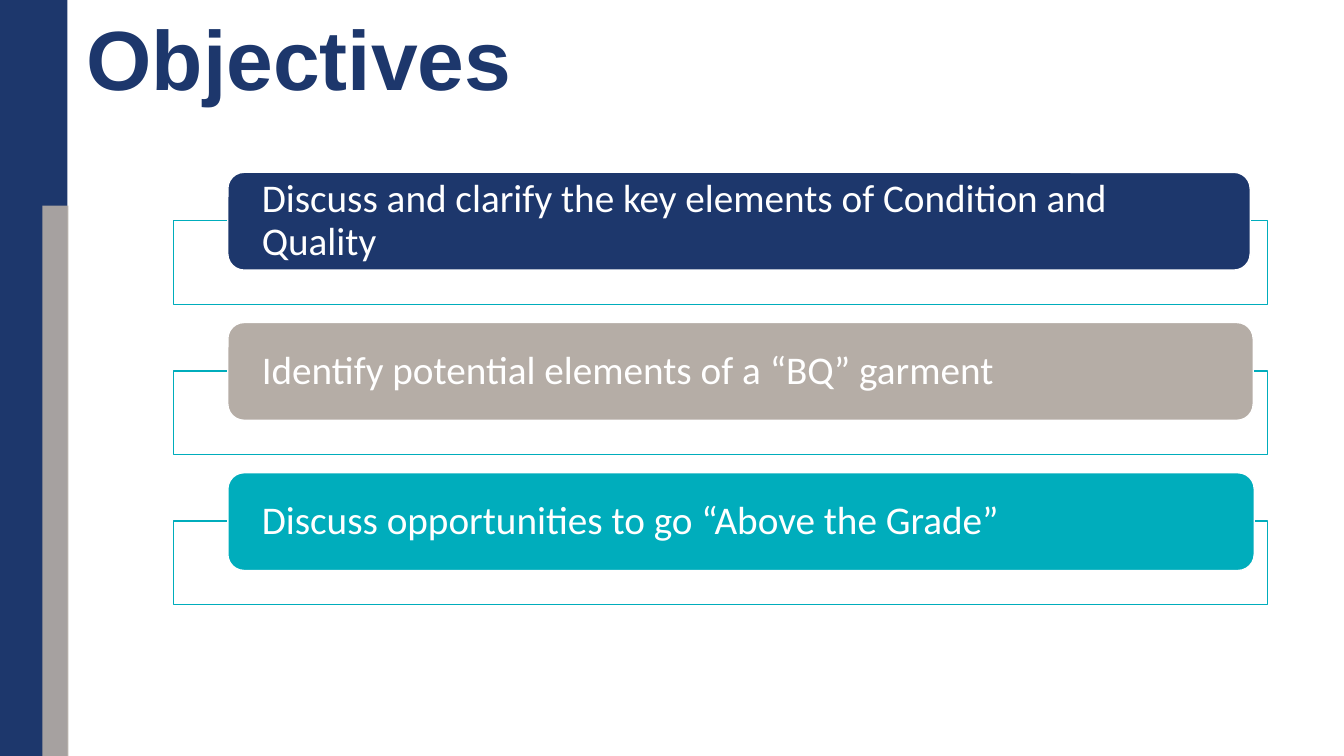
"""Build the Objectives slide with three framed goal bars."""
from dataclasses import dataclass

from lxml.etree import SubElement
from pptx import Presentation
from pptx.dml.color import RGBColor
from pptx.enum.shapes import MSO_SHAPE
from pptx.enum.text import MSO_ANCHOR, MSO_AUTO_SIZE, PP_ALIGN
from pptx.oxml.ns import qn
from pptx.shapes.autoshape import Shape
from pptx.slide import Slide
from pptx.text.text import TextFrame
from pptx.util import Emu, Pt

NAVY = RGBColor(0x1D, 0x37, 0x6C)
SAND = RGBColor(0xB5, 0xAD, 0xA6)
TEAL = RGBColor(0x00, 0xAD, 0xBC)
WHITE = RGBColor(0xFF, 0xFF, 0xFF)

SCALE = 9144
TOP = 171
PITCH = 149
INSET = Emu(29 * SCALE)


@dataclass(frozen=True)
class Box:
    x: int
    y: int
    w: int
    h: int


@dataclass(frozen=True)
class Goal:
    text: str
    width: int
    color: RGBColor


GOALS = (
    Goal("Discuss and clarify the key elements of Condition and Quality", 1014, NAVY),
    Goal("Identify potential elements of a “BQ” garment", 1017, SAND),
    Goal("Discuss opportunities to go “Above the Grade”", 1018, TEAL),
)

TITLE = {"name": "Arial", "size": Pt(60), "bold": True}
BODY = {"name": "Calibri", "size": Pt(28)}
TITLE_PARA = {"alignment": PP_ALIGN.LEFT, "line_spacing": Pt(65)}
BODY_PARA = {"alignment": PP_ALIGN.LEFT, "line_spacing": 0.9}
TITLE_FRAME = {"vertical_anchor": MSO_ANCHOR.TOP}
BODY_FRAME = {
    "vertical_anchor": MSO_ANCHOR.MIDDLE,
    "margin_left": INSET,
    "margin_right": INSET,
    "margin_top": 0,
    "margin_bottom": 0,
}


def emu(box: Box) -> list[Emu]:
    """Turn a box into EMU lengths."""
    return [Emu(n * SCALE) for n in (box.x, box.y, box.w, box.h)]


def apply(target: object, style: dict) -> None:
    """Set each attribute in a style."""
    for key, value in style.items():
        setattr(target, key, value)


def write(frame: TextFrame, text: str, color: RGBColor,
          font: dict, para: dict, style: dict) -> None:
    """Fill a text frame with one formatted paragraph."""
    apply(frame, {"word_wrap": True, "auto_size": MSO_AUTO_SIZE.NONE} | style)
    line = frame.paragraphs[0]
    apply(line, para)
    run = line.add_run()
    run.text = text
    apply(run.font, font)
    run.font.color.rgb = color


def draw(slide: Slide, kind: MSO_SHAPE, box: Box, fill: RGBColor,
         line: RGBColor | None = None, alpha: int = 100) -> Shape:
    """Draw a filled shape with an optional outline."""
    shape = slide.shapes.add_shape(kind, *emu(box))
    shape.shadow.inherit = False
    shape.fill.solid()
    shape.fill.fore_color.rgb = fill
    if alpha < 100:
        tint = next(shape.element.spPr.iter(qn("a:srgbClr")))
        SubElement(tint, qn("a:alpha"), val=str(alpha * 1000))
    if line is None:
        shape.line.fill.background()
    else:
        shape.line.color.rgb = line
        shape.line.width = Pt(1)
    return shape


def place(slide: Slide, goal: Goal, top: int) -> None:
    """Draw one goal bar over its frame."""
    draw(slide, MSO_SHAPE.RECTANGLE, Box(172, top + 48, 1085, 83), WHITE, TEAL, 90)
    bar = draw(slide, MSO_SHAPE.ROUNDED_RECTANGLE,
               Box(226, top, goal.width, 97), goal.color, WHITE)
    write(bar.text_frame, goal.text, WHITE, BODY, BODY_PARA, BODY_FRAME)


def main() -> None:
    """Build and save the slide."""
    deck = Presentation()
    deck.slide_width, deck.slide_height = Emu(1333 * SCALE), Emu(750 * SCALE)
    slide = deck.slides.add_slide(deck.slide_layouts[5])

    title = slide.shapes.title
    title.left, title.top, title.width, title.height = emu(Box(76, 11, 1181, 101))
    write(title.text_frame, "Objectives", NAVY, TITLE, TITLE_PARA, TITLE_FRAME)

    draw(slide, MSO_SHAPE.RECTANGLE, Box(0, 0, 67, 750), NAVY)
    draw(slide, MSO_SHAPE.RECTANGLE, Box(42, 204, 26, 546), SAND, alpha=90)
    for row, goal in enumerate(GOALS):
        place(slide, goal, TOP + row * PITCH)

    deck.save("out.pptx")


if __name__ == "__main__":
    main()
